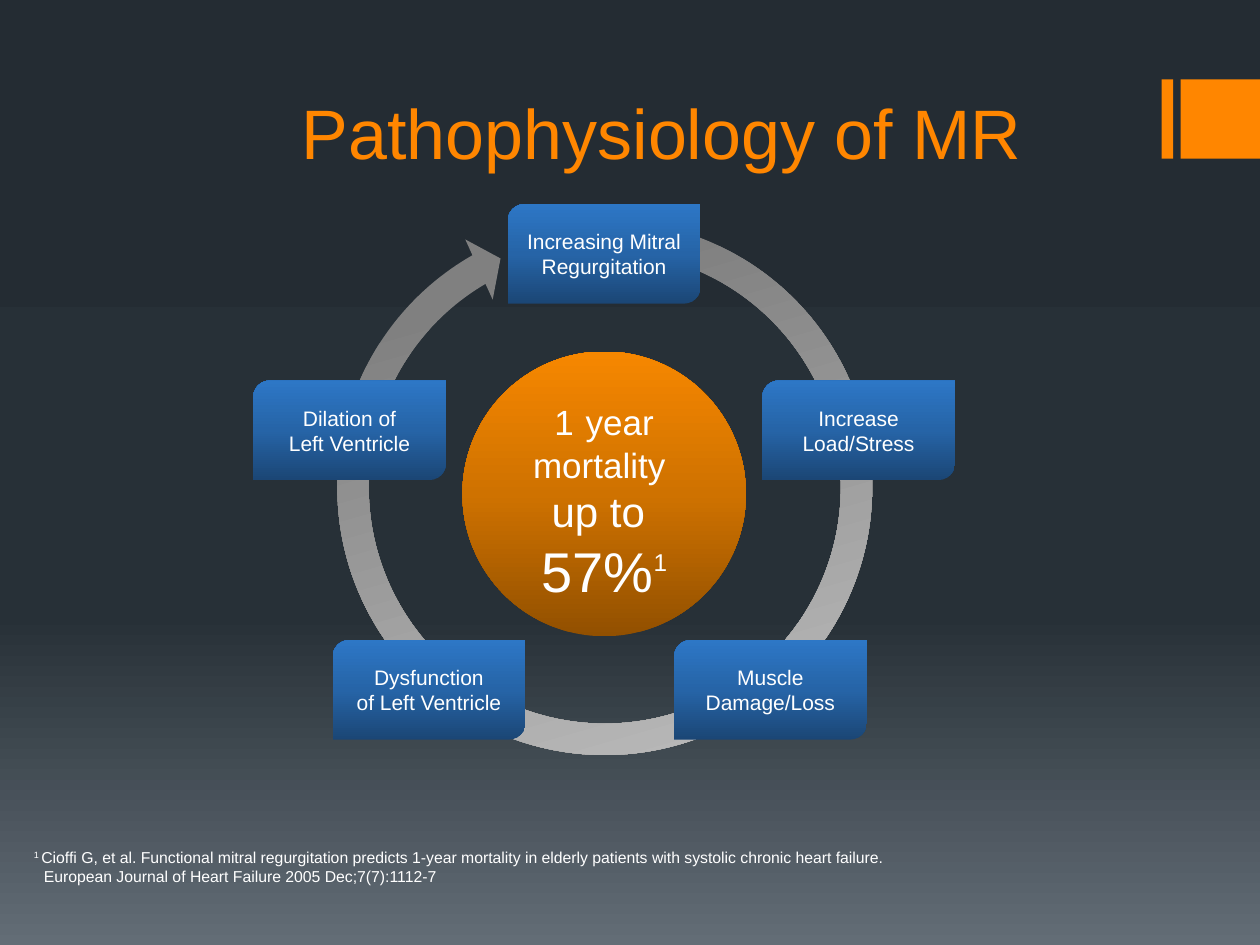
from dataclasses import dataclass

from lxml import etree
from pptx import Presentation
from pptx.dml.color import RGBColor
from pptx.enum import shapes as kinds, text as txt
from pptx.oxml.ns import qn
from pptx.util import Inches, Pt

COLORS = {
    "accent": "FF8600", "white": "FFFFFF",
    "night": "242C33", "slate": "273037", "mist": "636D76",
    "ring_dark": "808080", "ring_light": "BFBFBF",
    "blue_dark": "1B4675", "blue_mid": "2664A7", "blue_light": "2D77C6",
    "amber_dark": "925000", "amber_mid": "CF7200", "amber_light": "F68700",
}
STAGE_WIDTH, STAGE_HEIGHT = 1.53, 0.79


@dataclass
class Gradient:
    stops: list[tuple[int, str]]
    clockwise: int


@dataclass
class Span:
    words: str
    size: float
    raised: int = 0
    color: str = "white"


@dataclass
class Stage:
    lines: list[str]
    left: float
    top: float


BACKDROP = Gradient([(0, "night"), (65, "slate"), (100, "mist")], 90)
RING = Gradient([(19, "ring_dark"), (100, "ring_light")], 74)
BLUE = Gradient([(0, "blue_dark"), (50, "blue_mid"), (100, "blue_light")], 270)
AMBER = Gradient([(0, "amber_dark"), (50, "amber_mid"), (100, "amber_light")], 270)

STAGES = [
    Stage(["Increasing Mitral Regurgitation"], 4.03, 1.62),
    Stage(["Increase Load/Stress"], 6.05, 3.02),
    Stage(["Muscle Damage/Loss"], 5.35, 5.08),
    Stage(["Dysfunction", "of Left Ventricle"], 2.64, 5.08),
    Stage(["Dilation of", "Left Ventricle"], 2.01, 3.02),
]
MORTALITY = [
    [Span("1", 20), Span(" ", 24), Span("year mortality ", 20)],
    [Span("up to ", 24)],
    [Span("57%", 32), Span("1", 24, 50)],
]
CITATION = [
    [Span("1 ", 9, 30),
     Span("Cioffi G, et al. Functional mitral regurgitation predicts 1-year mortality "
          "in elderly patients with systolic chronic heart failure. ", 9)],
    [Span(" ", 5), Span("European Journal of Heart Failure 2005 Dec;7(7):1112-7", 9)],
]


def paint(fill, owner, gradient: Gradient) -> None:
    fill.gradient()
    fill.gradient_angle = (360 - gradient.clockwise) % 360
    stop_list = next(owner.iter(qn("a:gsLst")))
    for old in list(stop_list):
        stop_list.remove(old)
    for percent, color in gradient.stops:
        stop = etree.SubElement(stop_list, qn("a:gs"), pos=str(percent * 1000))
        etree.SubElement(stop, qn("a:srgbClr"), val=COLORS[color])


def add_form(slide, kind, left: float, top: float, width: float, height: float,
             fill: str | Gradient):
    form = slide.shapes.add_shape(kind, *map(Inches, (left, top, width, height)))
    form.shadow.inherit = False
    form.line.fill.background()
    if isinstance(fill, Gradient):
        paint(form.fill, form._element, fill)
    else:
        form.fill.solid()
        form.fill.fore_color.rgb = RGBColor.from_string(COLORS[fill])
    return form


def set_frame(frame, **settings) -> None:
    frame.word_wrap = True
    for name, value in settings.items():
        setattr(frame, name, value)


def add_spans(paragraph, spans: list[Span]) -> None:
    for span in spans:
        run = paragraph.add_run()
        run.text = span.words
        for name, value in {"name": "Arial", "size": Pt(span.size)}.items():
            setattr(run.font, name, value)
        run.font.color.rgb = RGBColor.from_string(COLORS[span.color])
        if span.raised:
            run._r.get_or_add_rPr().set("baseline", str(span.raised * 1000))


def write_centred(frame, lines: list[list[Span]]) -> None:
    for index, spans in enumerate(lines):
        paragraph = frame.add_paragraph() if index else frame.paragraphs[0]
        paragraph.alignment = txt.PP_ALIGN.CENTER
        add_spans(paragraph, spans)


def add_title(slide) -> None:
    title = slide.shapes.title
    place = {"left": 1.25, "top": 0.17, "width": 8, "height": 1.26}
    for name, value in place.items():
        setattr(title, name, Inches(value))
    set_frame(title.text_frame, vertical_anchor=txt.MSO_ANCHOR.BOTTOM)
    write_centred(title.text_frame, [[Span("Pathophysiology of MR", 40, color="accent")]])


def add_stage(slide, stage: Stage) -> None:
    box = add_form(slide, kinds.MSO_SHAPE.ROUND_2_DIAG_RECTANGLE,
                   stage.left, stage.top, STAGE_WIDTH, STAGE_HEIGHT, BLUE)
    set_frame(box.text_frame, vertical_anchor=txt.MSO_ANCHOR.MIDDLE,
              margin_left=Inches(0.05), margin_right=Inches(0.05))
    write_centred(box.text_frame, [[Span(line, 12)] for line in stage.lines])


def add_citation(slide) -> None:
    note = slide.shapes.add_textbox(*map(Inches, (0.17, 6.68, 9.08, 0.4)))
    set_frame(note.text_frame, auto_size=txt.MSO_AUTO_SIZE.SHAPE_TO_FIT_TEXT)
    paragraph = note.text_frame.paragraphs[0]
    hang = Inches(0.06)
    properties = paragraph._p.get_or_add_pPr()
    for name, value in {"marL": hang, "indent": -hang}.items():
        properties.set(name, str(int(value)))
    for index, spans in enumerate(CITATION):
        if index:
            paragraph.add_line_break()
        add_spans(paragraph, spans)


def main() -> None:
    deck = Presentation()
    deck.slide_width, deck.slide_height = Inches(10), Inches(7.5)
    slide = deck.slides.add_slide(deck.slide_layouts[5])
    paint(slide.background.fill, slide._element, BACKDROP)

    for left, width in ((9.22, 0.09), (9.37, 0.63)):
        add_form(slide, kinds.MSO_SHAPE.RECTANGLE, left, 0.63, width, 0.63, "accent")
    add_title(slide)

    cycle = add_form(slide, kinds.MSO_SHAPE.CIRCULAR_ARROW, 2.54, 1.61, 4.52, 4.52, RING)
    for index, value in enumerate((0.055, 3.307, 144.01, 170.16, 0.058)):
        cycle.adjustments[index] = value
    for stage in STAGES:
        add_stage(slide, stage)

    core = add_form(slide, kinds.MSO_SHAPE.OVAL, 3.67, 2.79, 2.25, 2.26, AMBER)
    set_frame(core.text_frame, vertical_anchor=txt.MSO_ANCHOR.TOP, margin_top=0)
    write_centred(core.text_frame, MORTALITY)
    add_citation(slide)
    deck.save("out.pptx")


if __name__ == "__main__":
    main()
